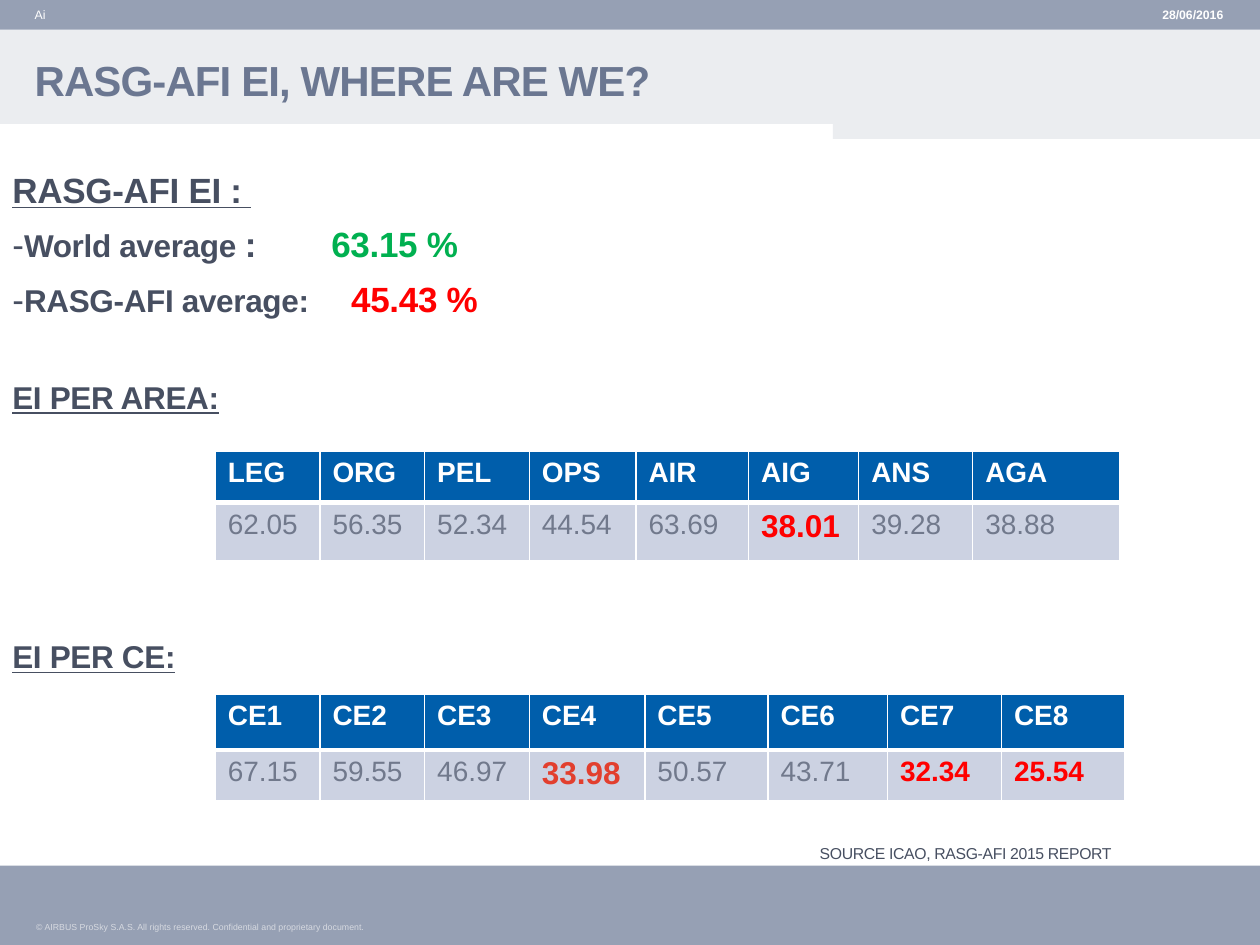
from lxml import etree
from pptx import Presentation
from pptx.dml.color import RGBColor
from pptx.enum.shapes import MSO_SHAPE
from pptx.enum.text import MSO_ANCHOR, PP_ALIGN
from pptx.oxml.ns import qn
from pptx.util import Cm, Pt

LEFT, RIGHT = PP_ALIGN.LEFT, PP_ALIGN.RIGHT
TOP, MIDDLE = MSO_ANCHOR.TOP, MSO_ANCHOR.MIDDLE
RECTANGLE = MSO_SHAPE.RECTANGLE

WHITE = RGBColor(0xFF, 0xFF, 0xFF)
PALE = RGBColor(0xEB, 0xED, 0xF0)
SLATE = RGBColor(0x96, 0xA0, 0xB4)
FOOTER_TEXT = RGBColor(0xD7, 0xDA, 0xE1)
TITLE_TEXT = RGBColor(0x6B, 0x77, 0x91)
DARK = RGBColor(0x47, 0x4F, 0x61)
GREEN = RGBColor(0x00, 0xB0, 0x50)
RED = RGBColor(0xFF, 0x00, 0x00)
BRICK = RGBColor(0xE2, 0x3F, 0x2E)
HEADER_FILL = RGBColor(0x00, 0x5E, 0xAB)
VALUE_FILL = RGBColor(0xCC, 0xD2, 0xE2)
VALUE_TEXT = RGBColor(0x71, 0x79, 0x8C)

FONT = "Arial"
SLIDE_W, SLIDE_H = 25.4, 19.05
BODY_X = 0.25
TABLE_X = 4.34

# Bands: left, top, width, height
BANDS = [(0, 17.45, SLIDE_W, 1.6), (0, 0, SLIDE_W, 0.6)]
TITLE_PANEL = [(0, 0.6), (SLIDE_W, 0.6), (SLIDE_W, 2.8), (16.79, 2.8), (16.79, 2.5), (0, 2.5)]

# Text boxes: position, anchor, alignment, letter spacing, paragraphs.
# A paragraph is a tab position (or None) and its runs:
# text, size, colour, bold, underlined.
TEXTS = [
    ((0.7, 0, 20.2, 0.6), MIDDLE, LEFT, 0,
     [(None, [("Ai", 7, WHITE, False, False)])]),
    ((21.26, 0, 3.4, 0.6), MIDDLE, RIGHT, 0,
     [(None, [("28/06/2016", 7, WHITE, True, False)])]),
    ((0.7, 0.75, 24, 1.7), MIDDLE, LEFT, -0.5,
     [(None, [("RASG-AFI EI, WHERE ARE WE?", 24, TITLE_TEXT, True, False)])]),
    ((BODY_X, 3.4, 20, 3.2), TOP, LEFT, -0.2, [
        (None, [("RASG-AFI EI : ", 20, DARK, True, True)]),
        (6.43, [("-", 20, DARK, False, False), ("World average ", 18, DARK, True, False),
                (":\t", 20, DARK, True, False), ("63.15 %", 20, GREEN, True, False)]),
        (6.83, [("-", 20, DARK, False, False), ("RASG-AFI average:\t", 18, DARK, True, False),
                ("45.43 %", 20, RED, True, False)]),
    ]),
    ((BODY_X, 7.62, 8, 0.8), TOP, LEFT, -0.2,
     [(None, [("EI PER AREA:", 18, DARK, True, True)])]),
    ((BODY_X, 12.85, 8, 0.8), TOP, LEFT, -0.2,
     [(4.14, [("EI PER CE:\t", 18, DARK, True, True)])]),
    ((14.4, 17, 8, 0.4), TOP, RIGHT, -0.2,
     [(None, [("SOURCE ICAO, RASG-AFI 2015 REPORT", 9, DARK, False, False)])]),
    ((0.73, 18.53, 8.5, 0.33), MIDDLE, LEFT, 0,
     [(None, [("© AIRBUS ProSky S.A.S. All rights reserved. Confidential and proprietary document.",
               5, FOOTER_TEXT, False, False)])]),
]

# Tables: top, row heights, columns (name, value, width), highlights (size, colour)
TABLES = [
    (9.1, (1.03, 1.17),
     [("LEG", "62.05", 2.11), ("ORG", "56.35", 2.11), ("PEL", "52.34", 2.11),
      ("OPS", "44.54", 2.15), ("AIR", "63.69", 2.27), ("AIG", "38.01", 2.22),
      ("ANS", "39.28", 2.3), ("AGA", "38.88", 2.97)],
     {"AIG": (18, RED)}),
    (14, (1.12, 1.03),
     [("CE1", "67.15", 2.11), ("CE2", "59.55", 2.11), ("CE3", "46.97", 2.11),
      ("CE4", "33.98", 2.33), ("CE5", "50.57", 2.48), ("CE6", "43.71", 2.41),
      ("CE7", "32.34", 2.3), ("CE8", "25.54", 2.48)],
     {"CE4": (18, BRICK), "CE7": (16, RED), "CE8": (16, RED)}),
]


def paint(shape, colour):
    shape.shadow.inherit = False
    shape.fill.solid()
    shape.fill.fore_color.rgb = colour
    shape.line.fill.background()


def style(span, size, colour, bold, underline=False):
    font = span.font
    font.name, font.size, font.bold = FONT, Pt(size), bold
    font.color.rgb = colour
    if underline:
        font.underline = True


def add_tab(para, position):
    tabs = etree.SubElement(para._p.get_or_add_pPr(), qn("a:tabLst"))
    etree.SubElement(tabs, qn("a:tab"), pos=str(Cm(position)), algn="l")


def add_text(page, place, anchor, align, spacing, paragraphs):
    box = page.shapes.add_textbox(*map(Cm, place))
    frame = box.text_frame
    frame.word_wrap = True
    frame.vertical_anchor = anchor
    frame.margin_left = frame.margin_right = frame.margin_top = frame.margin_bottom = 0
    for index, (tab, runs) in enumerate(paragraphs):
        para = frame.add_paragraph() if index else frame.paragraphs[0]
        if tab:
            add_tab(para, tab)
        para.alignment = align
        if index:
            para.space_before = Pt(7)
        for text, *look in runs:
            span = para.add_run()
            span.text = text
            style(span, *look)
            if spacing:
                span.font._element.set("spc", str(round(spacing * 100)))


def add_borders(cell, bottom):
    properties = cell._tc.get_or_add_tcPr()
    for side, width in (("L", 1), ("R", 1), ("T", 1), ("B", bottom)):
        line = etree.SubElement(properties, qn("a:ln" + side), w=str(Pt(width)))
        fill = etree.SubElement(line, qn("a:solidFill"))
        etree.SubElement(fill, qn("a:srgbClr"), val=str(WHITE))


def fill_cell(cell, text, fill, bottom, size, colour, bold):
    add_borders(cell, bottom)
    cell.fill.solid()
    cell.fill.fore_color.rgb = fill
    cell.text = text
    style(cell.text_frame.paragraphs[0].runs[0], size, colour, bold)


def add_values(page, top, heights, columns, highlights):
    width = sum(column[2] for column in columns)
    table = page.shapes.add_table(2, len(columns), Cm(TABLE_X), Cm(top),
                                  Cm(width), Cm(sum(heights))).table
    for row, height in zip(table.rows, heights):
        row.height = Cm(height)
    for index, (name, value, column_width) in enumerate(columns):
        table.columns[index].width = Cm(column_width)
        size, colour = highlights.get(name, (16, VALUE_TEXT))
        fill_cell(table.cell(0, index), name, HEADER_FILL, 3, 16, WHITE, True)
        fill_cell(table.cell(1, index), value, VALUE_FILL, 1, size, colour, name in highlights)


def main():
    deck = Presentation()
    deck.slide_width, deck.slide_height = Cm(SLIDE_W), Cm(SLIDE_H)
    page = deck.slides.add_slide(deck.slide_layouts[6])

    # Title panel and bands
    points = [(Cm(x), Cm(y)) for x, y in TITLE_PANEL]
    builder = page.shapes.build_freeform(*points[0])
    builder.add_line_segments(points[1:], close=True)
    paint(builder.convert_to_shape(), PALE)
    for band in BANDS:
        paint(page.shapes.add_shape(RECTANGLE, *map(Cm, band)), SLATE)

    # Texts and tables
    for text in TEXTS:
        add_text(page, *text)
    for table in TABLES:
        add_values(page, *table)

    deck.save("out.pptx")


if __name__ == "__main__":
    main()
